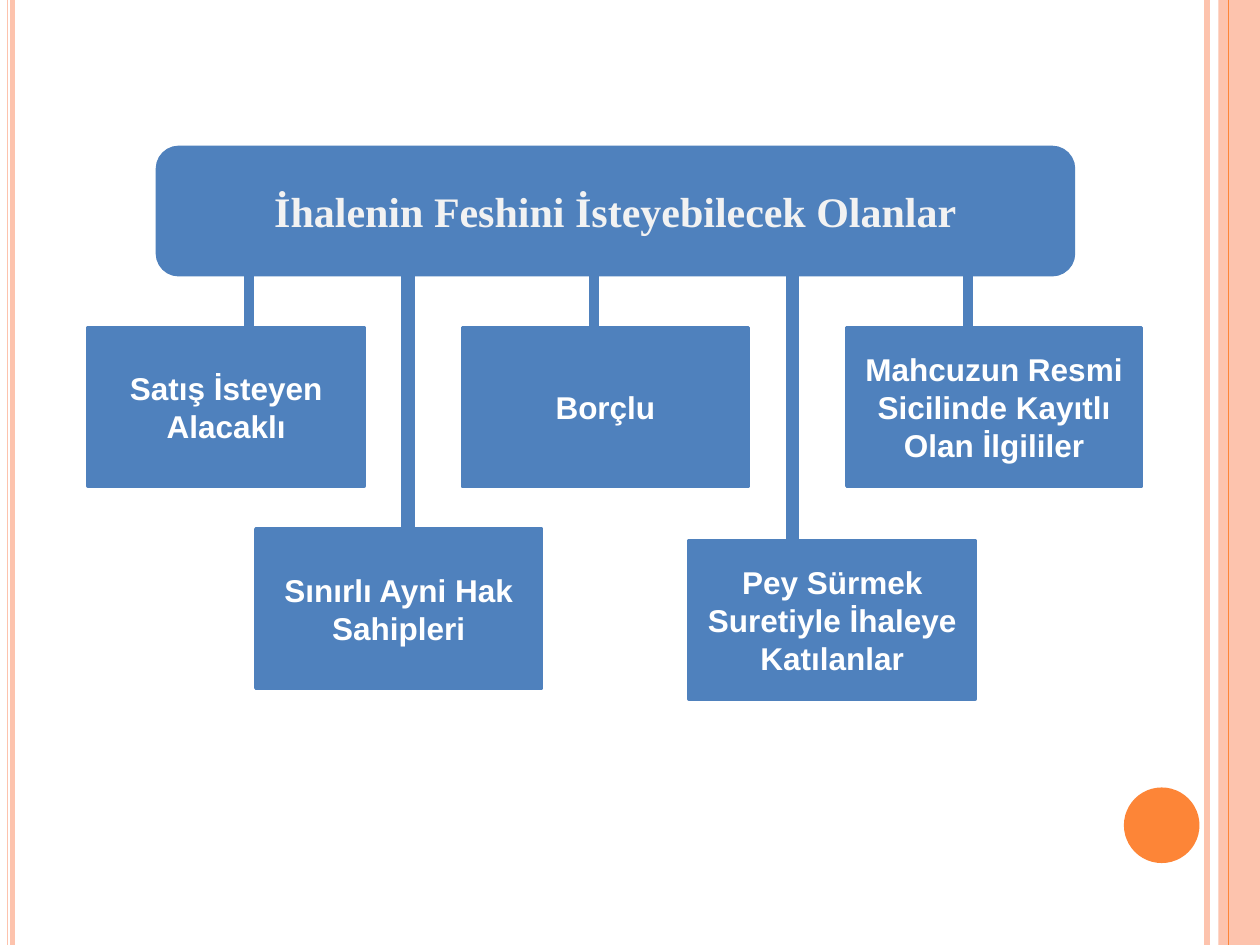
from lxml.etree import SubElement
from pptx import Presentation
from pptx.dml.color import RGBColor
from pptx.enum.shapes import MSO_CONNECTOR, MSO_SHAPE
from pptx.enum.text import MSO_ANCHOR, PP_ALIGN
from pptx.oxml.ns import qn
from pptx.util import Inches, Pt

COLORS = {
    "box": "4F81BD",
    "heading": "F2F2F2",
    "label": "FFFFFF",
    "stripe": "FDC3AD",
    "accent": "FD8537",
}
HEADING_FORMAT = {"name": "Times New Roman", "size": Pt(24), "bold": True}
LABEL_FORMAT = {"name": "Arial", "size": Pt(18), "bold": True}

SLIDE_WIDTH, SLIDE_HEIGHT = 10, 7.5
HEADING_TOP, HEADING_HEIGHT = 1.17, 1.01
HEADING_BOTTOM = HEADING_TOP + HEADING_HEIGHT
BOX_HEIGHT = 1.26

# Left, top and width of each box, then left and width of its stem
PARTIES = [
    ("Satış İsteyen Alacaklı", 0.7, 2.6, 2.19, 1.95, 0.05),
    ("Borçlu", 3.67, 2.6, 2.27, 4.69, 0.05),
    ("Mahcuzun Resmi Sicilinde Kayıtlı Olan İlgililer", 6.72, 2.6, 2.34, 7.66, 0.05),
    ("Sınırlı Ayni Hak Sahipleri", 2.03, 4.2, 2.27, 3.2, 0.08),
    ("Pey Sürmek Suretiyle İhaleye Katılanlar", 5.47, 4.29, 2.27, 6.25, 0.08),
]


def color(name):
    return RGBColor.from_string(COLORS[name])


def add_filled_shape(slide, kind, left, top, width, height, fill, outlined=False):
    shape = slide.shapes.add_shape(
        kind, Inches(left), Inches(top), Inches(width), Inches(height)
    )
    shape.shadow.inherit = False
    shape.fill.solid()
    shape.fill.fore_color.rgb = color(fill)
    if outlined:
        shape.line.color.rgb = color(fill)
        shape.line.width = Pt(2)
    else:
        shape.line.fill.background()
    return shape


def add_vertical_stripe(slide, x, width, line_color):
    """Draw a line over the whole slide height."""
    stripe = slide.shapes.add_connector(
        MSO_CONNECTOR.STRAIGHT, Inches(x), 0, Inches(x), Inches(SLIDE_HEIGHT)
    )
    stripe.line.color.rgb = color(line_color)
    stripe.line.width = Pt(width)
    SubElement(stripe._element.spPr, qn("a:effectLst"))


def write_centred(shape, text, text_color, font_format):
    frame = shape.text_frame
    frame.word_wrap = True
    frame.vertical_anchor = MSO_ANCHOR.MIDDLE
    paragraph = frame.paragraphs[0]
    paragraph.text = text
    paragraph.alignment = PP_ALIGN.CENTER
    paragraph.font.color.rgb = color(text_color)
    for attribute, value in font_format.items():
        setattr(paragraph.font, attribute, value)


def add_decoration(slide):
    for x, width in ((9.58, 3), (0.1, 2.81), (0.06, 1)):
        add_vertical_stripe(slide, x, width, "stripe")
    add_filled_shape(
        slide, MSO_SHAPE.RECTANGLE, 9.67, 0, SLIDE_WIDTH - 9.67, SLIDE_HEIGHT, "stripe"
    )
    add_vertical_stripe(slide, 9.75, 0.75, "accent")
    add_filled_shape(slide, MSO_SHAPE.OVAL, 8.92, 6.25, 0.6, 0.6, "accent")


def add_heading(slide, text):
    heading = add_filled_shape(
        slide, MSO_SHAPE.ROUNDED_RECTANGLE,
        1.25, HEADING_TOP, 7.27, HEADING_HEIGHT, "box", outlined=True,
    )
    write_centred(heading, text, "heading", HEADING_FORMAT)


def add_party(slide, text, left, top, width, stem_left, stem_width):
    """Add a box and the stem that joins it to the heading."""
    box = add_filled_shape(
        slide, MSO_SHAPE.RECTANGLE, left, top, width, BOX_HEIGHT, "box", outlined=True
    )
    write_centred(box, text, "label", LABEL_FORMAT)
    add_filled_shape(
        slide, MSO_SHAPE.RECTANGLE,
        stem_left, HEADING_BOTTOM, stem_width, top - HEADING_BOTTOM, "box", outlined=True,
    )


def main():
    presentation = Presentation()
    presentation.slide_width = Inches(SLIDE_WIDTH)
    presentation.slide_height = Inches(SLIDE_HEIGHT)
    slide = presentation.slides.add_slide(presentation.slide_layouts[6])
    add_decoration(slide)
    add_heading(slide, "İhalenin Feshini İsteyebilecek Olanlar")
    for party in PARTIES:
        add_party(slide, *party)
    presentation.save("out.pptx")


if __name__ == "__main__":
    main()
